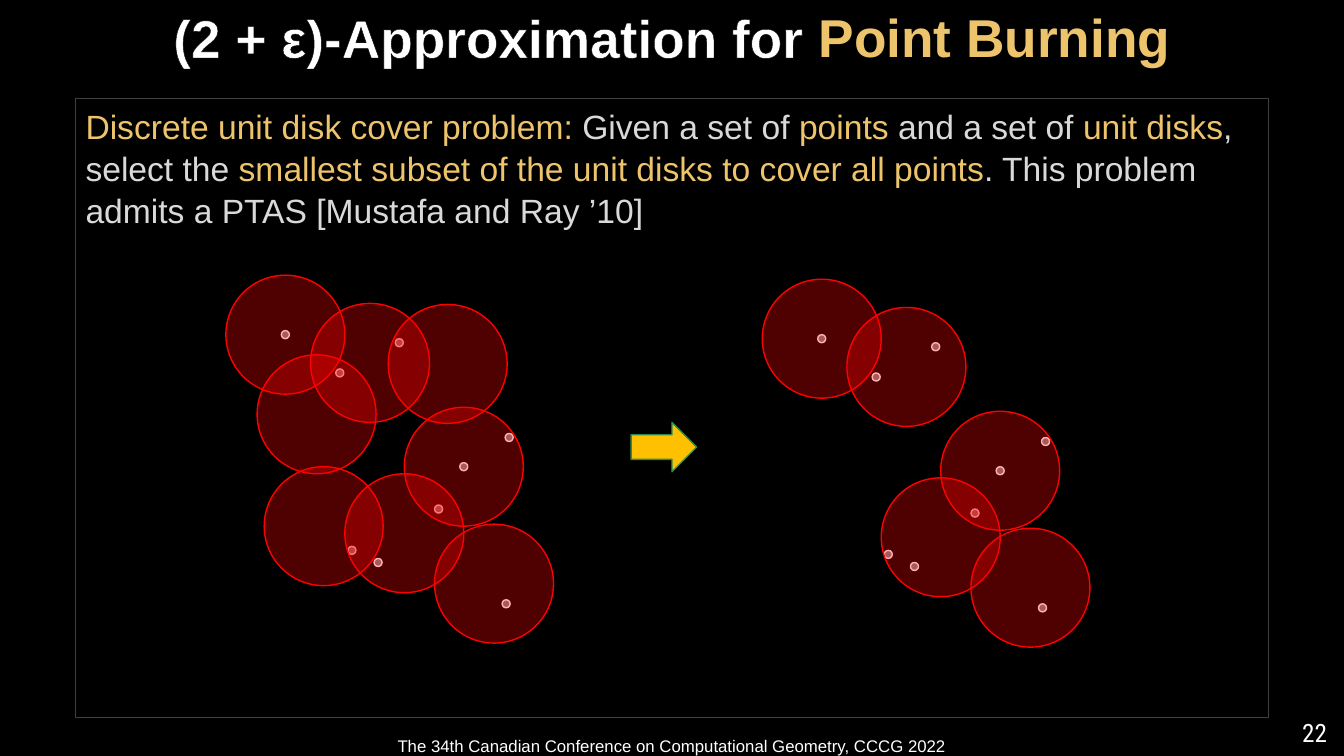
"""Slide on the discrete unit disk cover problem, before and after choosing disks."""
from lxml import etree
from pptx import Presentation
from pptx.dml.color import RGBColor
from pptx.enum import shapes, text
from pptx.oxml import ns
from pptx.util import Inches, Pt

BLACK = RGBColor(0, 0, 0)
WHITE = RGBColor(255, 255, 255)
GOLD = RGBColor(0xED, 0xC4, 0x6C)
SILVER = RGBColor(0xD9, 0xD9, 0xD9)
FRAME_GREY = RGBColor(0x40, 0x40, 0x40)
POINT_GREY = RGBColor(0xF2, 0xF2, 0xF2)
RED = RGBColor(255, 0, 0)
AMBER = RGBColor(0xFF, 0xC0, 0)
GREEN = RGBColor(0x2F, 0x89, 0x50)

TITLE = [("(2 + ε)-Approximation for ", WHITE), ("Point Burning", GOLD)]
PROBLEM = [
    ("Discrete unit disk cover problem: ", GOLD),
    ("Given a set of ", SILVER),
    ("points", GOLD),
    (" and a set of ", SILVER),
    ("unit disks", GOLD),
    (", select the ", SILVER),
    ("smallest subset of the unit disks to cover all points", GOLD),
    (". This problem admits a PTAS [Mustafa and Ray ’10]", SILVER),
]
FOOTER = [("The 34th Canadian Conference on Computational Geometry, CCCG 2022", WHITE)]
PAGE = [("22", WHITE)]

POINTS = [(2.79, 3.28), (4.31, 5.01), (5.01, 4.3), (3.92, 3.36), (3.33, 3.66),
          (4.56, 4.59), (3.71, 5.54), (4.98, 5.95), (3.45, 5.42)]
CHOSEN_DISKS = [(4.01, 4.04), (2.24, 2.73), (3.08, 3.01), (3.42, 4.7), (4.31, 5.2)]
SPARE_DISKS = [(2.62, 4.63), (3.85, 3.02), (2.55, 3.52)]
POINT_SIZE, DISK_SIZE = 0.08, 1.18
COVER_SHIFT = (5.32, 0.04)

deck = Presentation()
deck.slide_width, deck.slide_height = Inches(13.33), Inches(7.5)
slide = deck.slides.add_slide(deck.slide_layouts[6])
slide.background.fill.solid()
slide.background.fill.fore_color.rgb = BLACK


def add_figure(kind, box, fill=None, line=None, width=1, alpha=None):
    figure = slide.shapes.add_shape(kind, *map(Inches, box))
    figure.shadow.inherit = False
    if fill is None:
        figure.fill.background()
    else:
        figure.fill.solid()
        figure.fill.fore_color.rgb = fill
    if alpha is not None:
        colour = figure.fill._xPr.find(".//" + ns.qn("a:srgbClr"))
        etree.SubElement(colour, ns.qn("a:alpha"), val=str(alpha * 1000))
    if line is None:
        figure.line.fill.background()
    else:
        figure.line.color.rgb = line
        figure.line.width = Pt(width)
    return figure


def outline_run(run):
    edge = etree.Element(ns.qn("a:ln"), w=str(Pt(0.75)))
    solid = etree.SubElement(edge, ns.qn("a:solidFill"))
    etree.SubElement(solid, ns.qn("a:srgbClr"), val=str(BLACK))
    run.font._element.insert(0, edge)


def write(holder, runs, size, align, font="Arial", bold=False, spacing=1.0, outline=False):
    frame = holder.text_frame
    frame.word_wrap = True
    frame.vertical_anchor = text.MSO_ANCHOR.TOP
    paragraph = frame.paragraphs[0]
    paragraph.alignment = align
    paragraph.line_spacing = spacing
    for words, colour in runs:
        run = paragraph.add_run()
        run.text = words
        run.font.name, run.font.size, run.font.bold = font, Pt(size), bold
        run.font.color.rgb = colour
        if outline:
            outline_run(run)


def draw_instance(disks, shift=(0, 0)):
    layers = [(POINTS, POINT_SIZE, POINT_GREY, WHITE, 54), (disks, DISK_SIZE, RED, RED, 31)]
    for corners, size, fill, line, alpha in layers:
        for x, y in corners:
            box = (x + shift[0], y + shift[1], size, size)
            add_figure(shapes.MSO_SHAPE.OVAL, box, fill, line, alpha=alpha)


RECT = shapes.MSO_SHAPE.RECTANGLE
ALIGN = text.PP_ALIGN

title = add_figure(RECT, (0, 0.07, 13.33, 0.84), line=BLACK)
write(title, TITLE, 38, ALIGN.CENTER, bold=True, spacing=0.9, outline=True)
problem = add_figure(RECT, (0.75, 0.98, 11.83, 6.14), line=FRAME_GREY)
write(problem, PROBLEM, 24, ALIGN.LEFT, spacing=1.05)
footer = add_figure(RECT, (0, 7.25, 13.33, 0.25), BLACK, BLACK, 0.5)
write(footer, FOOTER, 12, ALIGN.CENTER)
page = slide.shapes.add_textbox(*map(Inches, (10.76, 7.07, 2.5, 0.83)))
write(page, PAGE, 18, ALIGN.RIGHT, font="Roboto Condensed")

draw_instance(CHOSEN_DISKS + SPARE_DISKS)
draw_instance(CHOSEN_DISKS, COVER_SHIFT)
add_figure(shapes.MSO_SHAPE.RIGHT_ARROW, (6.26, 4.19, 0.65, 0.49), AMBER, GREEN)

deck.save("out.pptx")
